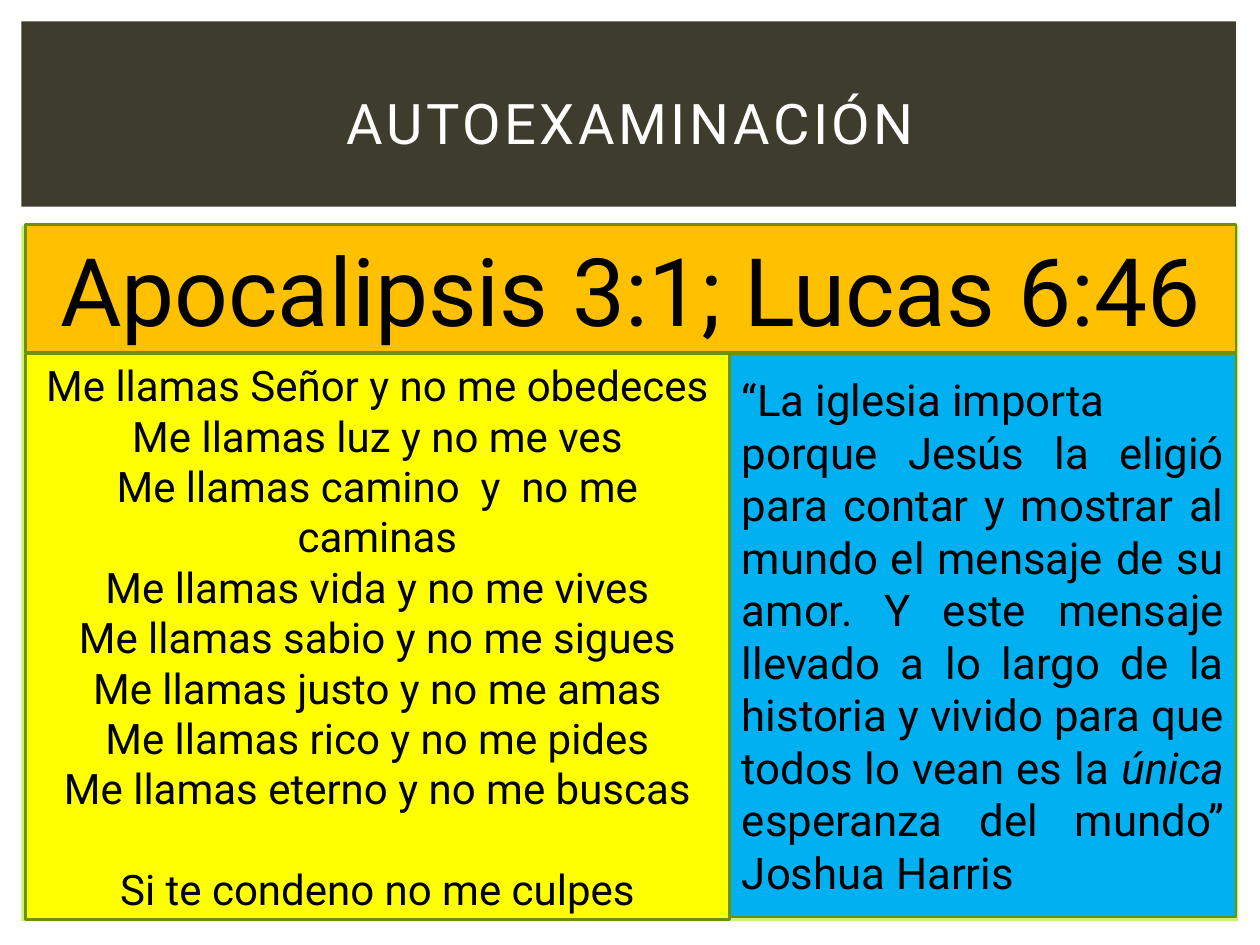
from pptx import Presentation
from pptx.dml.color import RGBColor
from pptx.enum.shapes import MSO_SHAPE
from pptx.enum.text import MSO_ANCHOR, PP_ALIGN
from pptx.util import Inches, Pt

# Content: each paragraph is a list of (text, italic) runs
TITLE = [[("AUTOEXAMINACIÓN", False)]]
VERSES = [[("Apocalipsis 3:1; Lucas 6:46", False)]]
POEM = [[(line, False)] for line in (
    "Me llamas Señor y no me obedeces",
    "Me llamas luz y no me ves",
    "Me llamas camino  y  no me caminas",
    "Me llamas vida y no me vives",
    "Me llamas sabio y no me sigues",
    "Me llamas justo y no me amas",
    "Me llamas rico y no me pides",
    "Me llamas eterno y no me buscas",
    "Si te condeno no me culpes",
)]
QUOTE = [
    [("“La iglesia importa", False)],
    [("porque Jesús la eligió para contar y mostrar al mundo el mensaje de su "
      "amor. Y este mensaje llevado a lo largo de la historia y vivido para "
      "que todos lo vean es la ", False),
     ("única ", True),
     ("esperanza del mundo” Joshua Harris", False)],
]

THEME = {
    "font": "Roboto",
    "band": "3E3D2D", "backdrop": "CAF278", "border": "6D9200",
    "verses": "FFC000", "poem": "FFFF00", "quote": "00B0F0",
    "light": "FFFFFF", "dark": "000000",
    "title_size": 32, "verses_size": 54, "poem_size": 24, "quote_size": 25,
    "border_width": 1.5, "stanza_gap": 28.8, "title_spacing": 2,
}

# Layout in inches
LEFT, RIGHT, SPLIT = 0.2, 9.81, 5.79
VERSES_TOP, BODY_TOP = 1.78, 2.81


def add_panel(slide, box, fill, bordered=True):
    sp = slide.shapes.add_shape(MSO_SHAPE.RECTANGLE, *map(Inches, box))
    sp.shadow.inherit = False
    sp.fill.solid()
    sp.fill.fore_color.rgb = RGBColor.from_string(THEME[fill])
    if bordered:
        sp.line.color.rgb = RGBColor.from_string(THEME["border"])
        sp.line.width = Pt(THEME["border_width"])
    else:
        sp.line.fill.background()
    return sp


def write(sp, paragraphs, size, color="dark", align=PP_ALIGN.CENTER):
    tf = sp.text_frame
    tf.word_wrap = True
    tf.vertical_anchor = MSO_ANCHOR.MIDDLE
    for i, runs in enumerate(paragraphs):
        p = tf.paragraphs[0] if i == 0 else tf.add_paragraph()
        p.alignment = align
        for text, italic in runs:
            r = p.add_run()
            r.text = text
            r.font.name = THEME["font"]
            r.font.size = Pt(THEME[size])
            r.font.italic = italic
            r.font.color.rgb = RGBColor.from_string(THEME[color])
    return tf


prs = Presentation()
prs.slide_width, prs.slide_height = Inches(10), Inches(7.5)
s = prs.slides.add_slide(prs.slide_layouts[6])

# Backdrop and title band
add_panel(s, (0.17, 1.79, 9.66, 5.52), "backdrop", bordered=False)
add_panel(s, (0.17, 0.17, 9.64, 1.47), "band", bordered=False)
title = s.shapes.add_textbox(*map(Inches, (0.42, 0.39, 9.17, 1.15)))
tf = write(title, TITLE, "title_size", "light")
tf.paragraphs[0].runs[0].font._element.set("spc", str(THEME["title_spacing"] * 100))

# Bible verses
verses = add_panel(s, (LEFT, VERSES_TOP, RIGHT - LEFT, 1.02), "verses")
write(verses, VERSES, "verses_size")

# Poem, with its closing line set apart
poem = add_panel(s, (LEFT, BODY_TOP, SPLIT - LEFT, 4.49), "poem")
tf = write(poem, POEM, "poem_size")
tf.paragraphs[-1].space_before = Pt(THEME["stanza_gap"])

# Quotation
quote = add_panel(s, (SPLIT, BODY_TOP, RIGHT - SPLIT, 4.47), "quote")
write(quote, QUOTE, "quote_size", align=PP_ALIGN.JUSTIFY)

prs.save("out.pptx")
